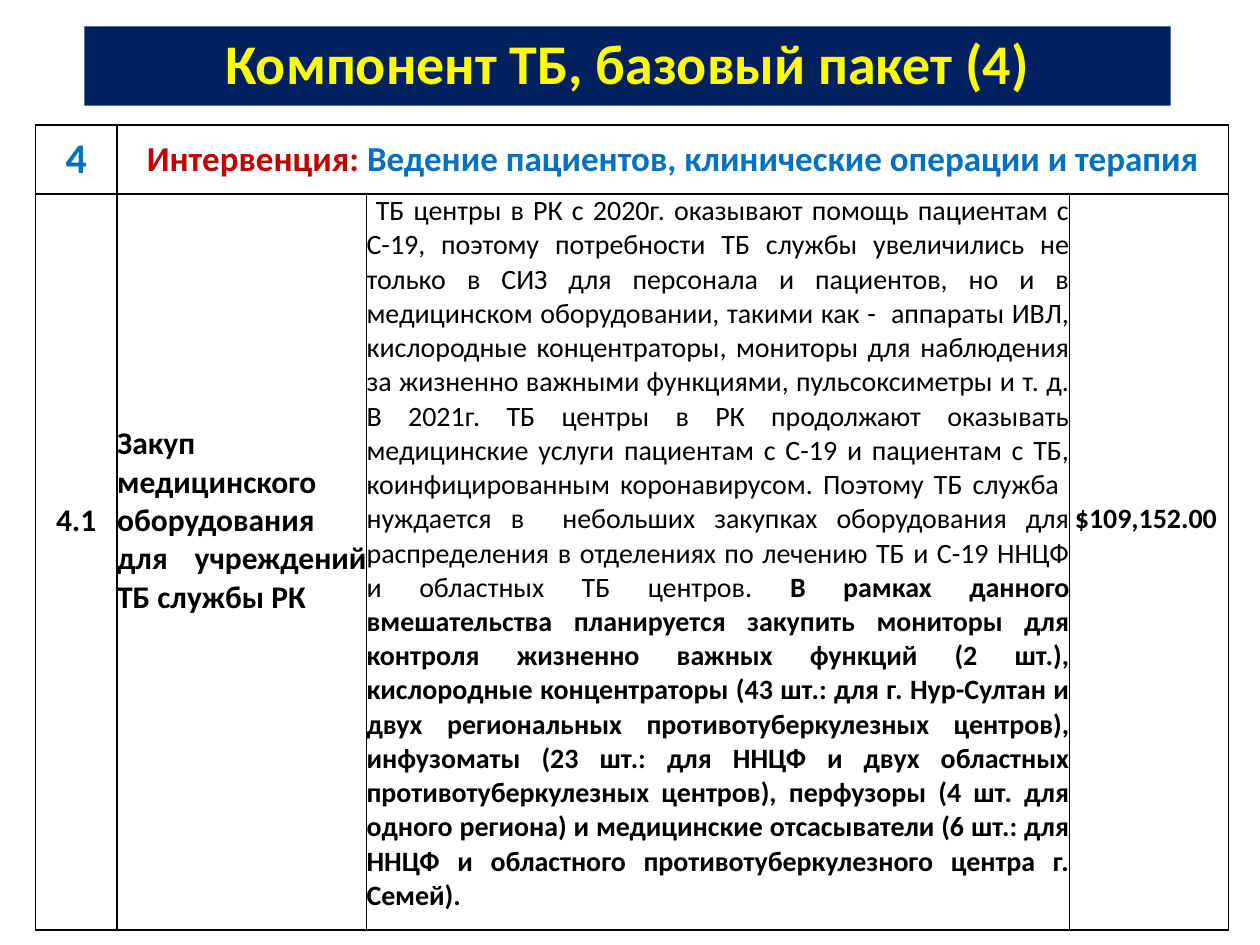
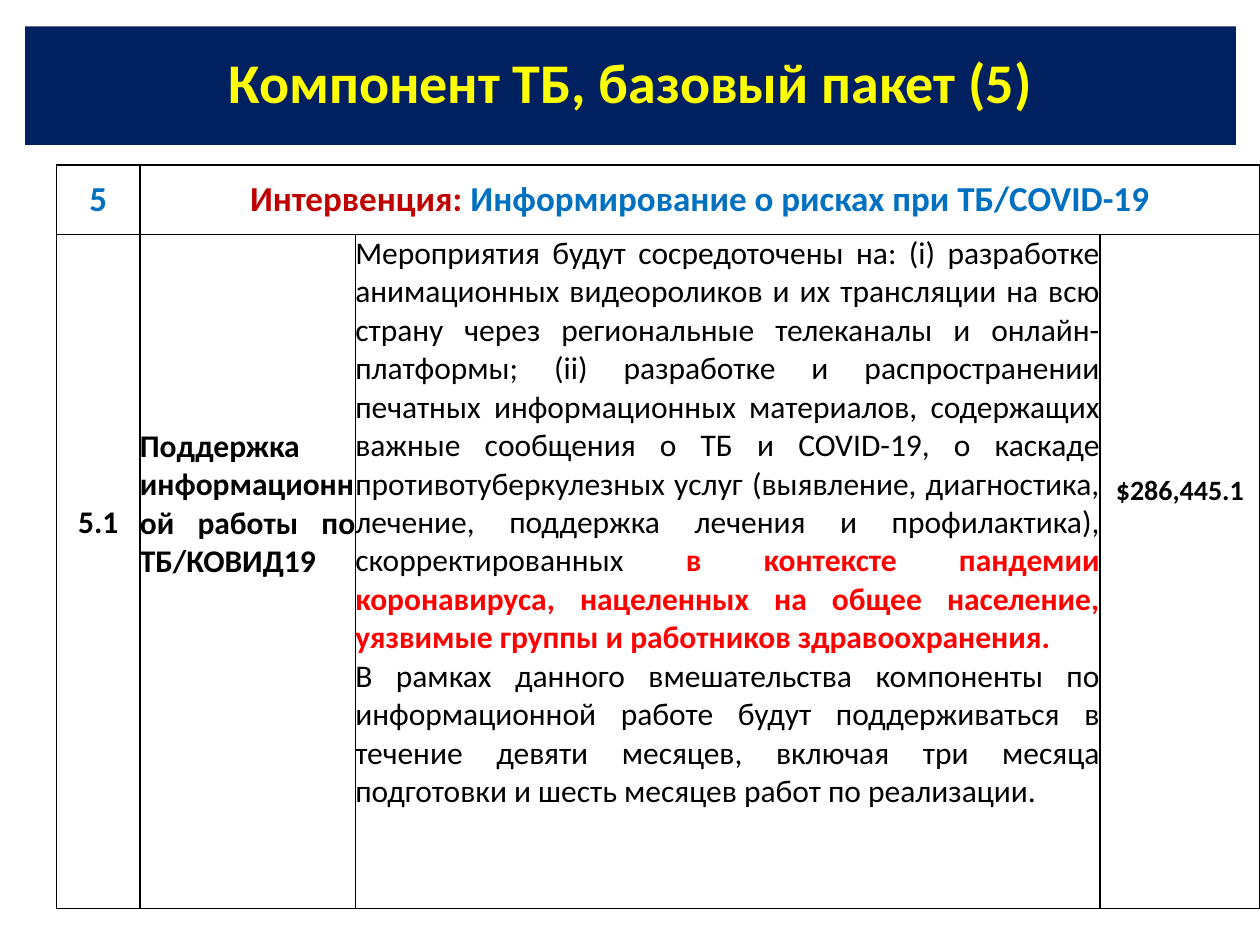
from dataclasses import dataclass

from lxml import etree
from pptx import Presentation
from pptx import util as u
from pptx.dml.color import RGBColor
from pptx.enum import shapes, text
from pptx.oxml import ns


@dataclass(frozen=True)
class Theme:
    font: str = "Calibri"
    navy: str = "002060"
    yellow: str = "FFFF00"
    blue: str = "0070C0"
    crimson: str = "C00000"
    red: str = "FF0000"
    black: str = "000000"
    white: str = "FFFFFF"
    title_size: int = 32
    heading_size: int = 20
    label_size: int = 18
    amount_size: int = 16
    border: float = 1


THEME = Theme()
PLAIN = dict(bold=False)
ALARM = dict(color=THEME.red)

# "drop" is the distance from the top of the row to the text, in inches.
PAGES = [
    dict(
        title="Компонент ТБ, базовый пакет (4)",
        band=(0.67, 0.21, 8.62, 0.63),
        table_at=(0.28, 0.99),
        columns=(0.65, 1.98, 5.58, 1.26),
        rows=(0.55, 5.84),
        number="4",
        number_size=24,
        intervention="Ведение пациентов, клинические операции и терапия",
        code="4.1",
        code_drop=2.44,
        activity="Закуп медицинского оборудования для учреждений ТБ службы РК",
        activity_drop=1.83,
        details_size=16,
        details=[[
            (" ТБ центры в РК с 2020г. оказывают помощь пациентам с С-19, поэтому "
             "потребности ТБ службы увеличились не только в СИЗ для персонала и "
             "пациентов, но и в медицинском оборудовании, такими как -  аппараты ИВЛ, "
             "кислородные концентраторы, мониторы для наблюдения за жизненно важными "
             "функциями, пульсоксиметры и т. д. В 2021г. ТБ центры в РК продолжают "
             "оказывать медицинские услуги пациентам с C-19 и пациентам с ТБ, "
             "коинфицированным коронавирусом. Поэтому ТБ служба  нуждается в  "
             "небольших закупках оборудования для распределения в отделениях по "
             "лечению ТБ и C-19 ННЦФ и областных ТБ центров. ", PLAIN),
            ("В рамках данного вмешательства планируется закупить мониторы для "
             "контроля жизненно важных функций (2 шт.), кислородные концентраторы "
             "(43 шт.: для г. Нур-Султан и двух региональных противотуберкулезных "
             "центров), инфузоматы (23 шт.: для ННЦФ и двух областных "
             "противотуберкулезных центров), перфузоры (4 шт. для одного региона) и "
             "медицинские отсасыватели (6 шт.: для ННЦФ и областного "
             "противотуберкулезного центра г. Семей).", {}),
        ]],
        amount="$109,152.00 ",
        amount_drop=2.44,
    ),
    dict(
        title="Компонент ТБ, базовый пакет (5)",
        band=(0.2, 0.21, 9.61, 0.94),
        table_at=(0.45, 1.31),
        columns=(0.66, 1.71, 5.91, 1.27),
        rows=(0.55, 5.35),
        number="5",
        number_size=20,
        intervention="Информирование о рисках при ТБ/COVID-19",
        code="5.1",
        code_drop=2.14,
        activity="Поддержка информационной работы по ТБ/КОВИД19",
        activity_drop=1.53,
        details_size=18,
        details=[
            [
                ("Мероприятия будут сосредоточены на: (i) разработке анимационных "
                 "видеороликов и их трансляции на всю страну через региональные "
                 "телеканалы и онлайн-платформы; (ii) разработке и распространении "
                 "печатных информационных материалов, содержащих важные сообщения о "
                 "ТБ и COVID-19, о каскаде противотуберкулезных услуг (выявление, "
                 "диагностика, лечение, поддержка лечения и профилактика), "
                 "скорректированных ", PLAIN),
                ("в контексте пандемии коронавируса, нацеленных на общее население, "
                 "уязвимые группы и работников здравоохранения.", ALARM),
            ],
            [
                ("В рамках данного вмешательства компоненты по информационной работе "
                 "будут поддерживаться в течение девяти месяцев, включая три месяца "
                 "подготовки и шесть месяцев работ по реализации.", PLAIN),
            ],
        ],
        amount="$286,445.1",
        amount_drop=1.9,
    ),
]


def write(frame, content, size, color=THEME.black, bold=True,
          align=text.PP_ALIGN.CENTER, line_spacing=None):
    """Fill a frame with a string, or with paragraphs of (words, overrides) spans."""
    paragraphs = [[(content, {})]] if isinstance(content, str) else content
    for index, spans in enumerate(paragraphs):
        para = frame.add_paragraph() if index else frame.paragraphs[0]
        para.alignment = align
        para.line_spacing = line_spacing
        for words, overrides in spans:
            look = dict(color=color, bold=bold) | overrides
            span = para.add_run()
            span.text = words
            span.font.name = THEME.font
            span.font.size = u.Pt(size)
            span.font.bold = look["bold"]
            span.font.color.rgb = RGBColor.from_string(look["color"])


def paint(fill, color):
    fill.solid()
    fill.fore_color.rgb = RGBColor.from_string(color)


def add_title(page, title, band):
    box = page.shapes.add_shape(shapes.MSO_SHAPE.RECTANGLE, *map(u.Inches, band))
    box.shadow.inherit = False
    paint(box.fill, THEME.navy)
    box.line.fill.background()
    box.text_frame.word_wrap = True
    box.text_frame.vertical_anchor = text.MSO_ANCHOR.MIDDLE
    write(box.text_frame, title, THEME.title_size, color=THEME.yellow, line_spacing=0.9)


def style_cell(cell):
    """Give a cell thin black borders, a white fill and no margins."""
    properties = cell._tc.get_or_add_tcPr()
    for side in ("a:lnL", "a:lnR", "a:lnT", "a:lnB"):
        line = etree.SubElement(properties, ns.qn(side), w=str(u.Pt(THEME.border)))
        solid = etree.SubElement(line, ns.qn("a:solidFill"))
        etree.SubElement(solid, ns.qn("a:srgbClr"), val=THEME.black)
    paint(cell.fill, THEME.white)
    cell.margin_left = cell.margin_right = cell.margin_top = cell.margin_bottom = 0


def add_intervention_table(page, data):
    columns, rows = data["columns"], data["rows"]
    area = (*data["table_at"], sum(columns), sum(rows))
    table = page.shapes.add_table(len(rows), len(columns), *map(u.Inches, area)).table
    table.first_row = table.horz_banding = False
    for column, width in zip(table.columns, columns):
        column.width = u.Inches(width)
    for row, height in zip(table.rows, rows):
        row.height = u.Inches(height)
    for cell in table.iter_cells():
        style_cell(cell)

    number, heading = table.cell(0, 0), table.cell(0, 1)
    heading.merge(table.cell(0, len(columns) - 1))
    number.vertical_anchor = heading.vertical_anchor = text.MSO_ANCHOR.MIDDLE
    write(number.text_frame, data["number"], data["number_size"], color=THEME.blue)
    write(heading.text_frame,
          [[("Интервенция: ", dict(color=THEME.crimson)), (data["intervention"], {})]],
          THEME.heading_size, color=THEME.blue)

    center, justify = text.PP_ALIGN.CENTER, text.PP_ALIGN.JUSTIFY
    body = [
        (data["code"], data["code_drop"], THEME.label_size, center),
        (data["activity"], data["activity_drop"], THEME.label_size, justify),
        (data["details"], 0, data["details_size"], justify),
        (data["amount"], data["amount_drop"], THEME.amount_size, center),
    ]
    for index, (content, drop, size, align) in enumerate(body):
        cell = table.cell(1, index)
        cell.margin_top = u.Inches(drop)
        write(cell.text_frame, content, size, align=align)


def main():
    deck = Presentation()
    deck.slide_width, deck.slide_height = u.Inches(10), u.Inches(7.5)
    blank = deck.slide_layouts[6]
    for data in PAGES:
        page = deck.slides.add_slide(blank)
        add_title(page, data["title"], data["band"])
        add_intervention_table(page, data)
    deck.save("out.pptx")


if __name__ == "__main__":
    main()
